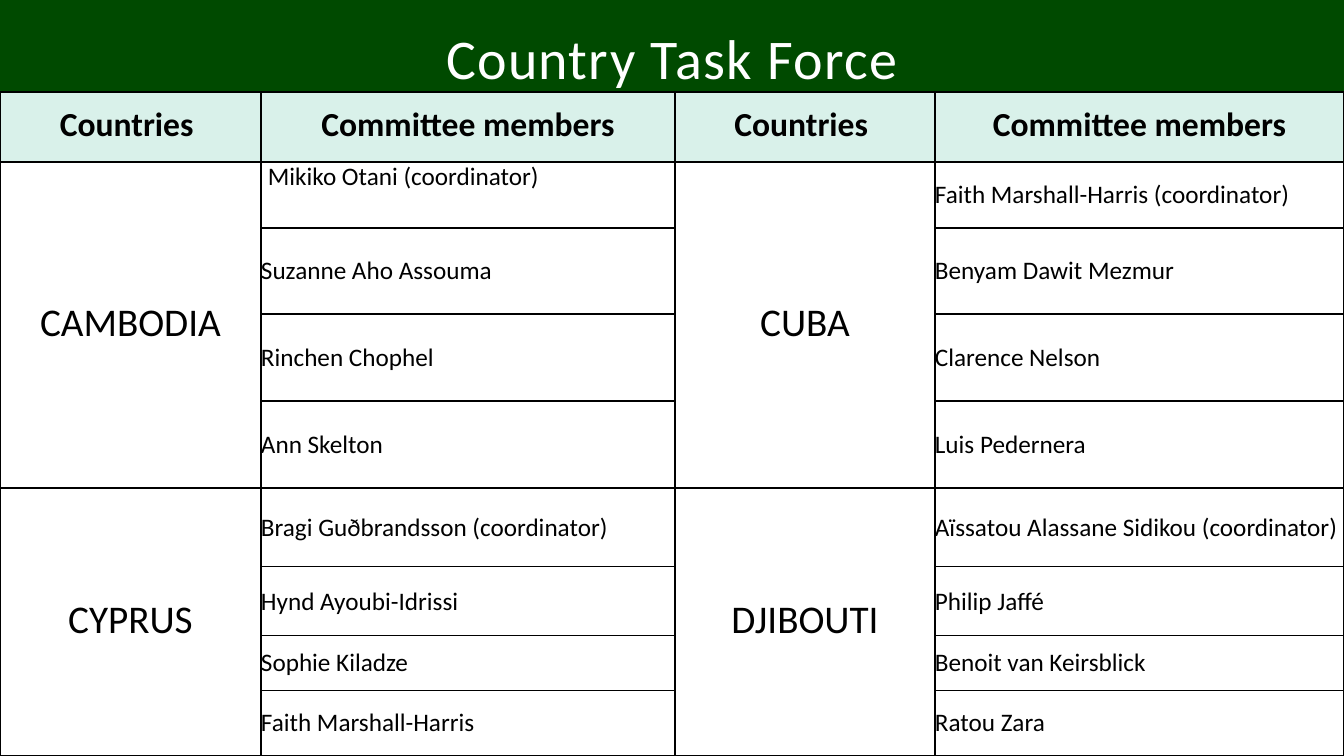
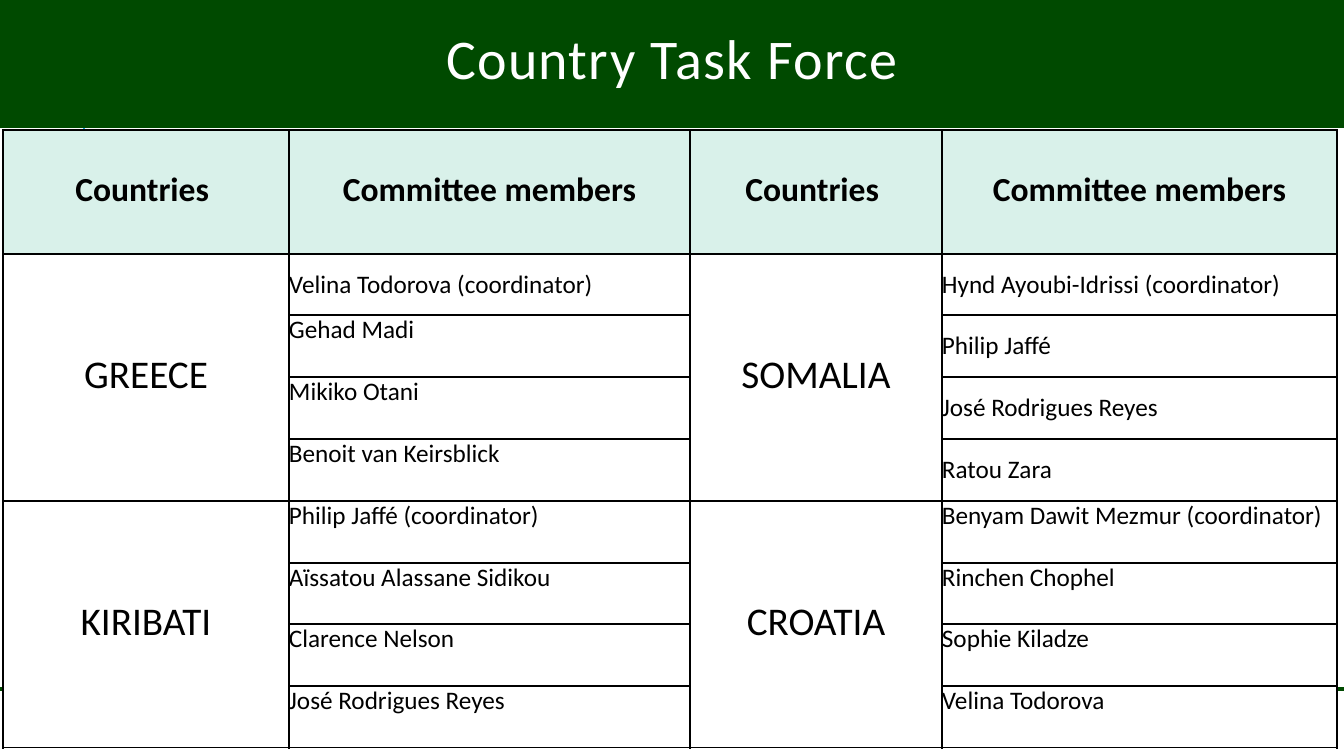
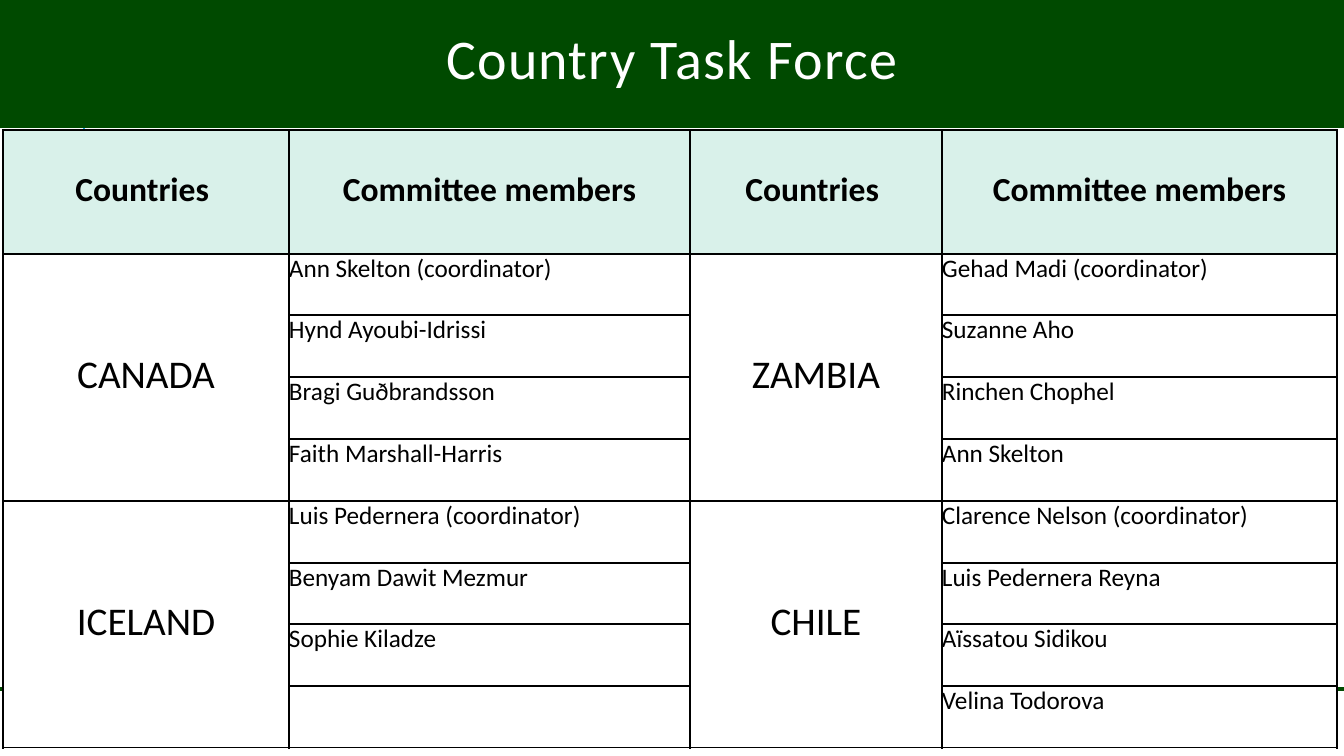
from dataclasses import dataclass
from itertools import pairwise, zip_longest

from lxml import etree
from pptx import Presentation
from pptx.dml.color import RGBColor
from pptx.enum.shapes import MSO_CONNECTOR, MSO_SHAPE
from pptx.enum.text import MSO_ANCHOR, PP_ALIGN
from pptx.oxml.ns import qn
from pptx.util import Emu, Pt

STRAIGHT = MSO_CONNECTOR.STRAIGHT
RECTANGLE = MSO_SHAPE.RECTANGLE
TOP, MIDDLE = MSO_ANCHOR.TOP, MSO_ANCHOR.MIDDLE
LEFT, CENTER = PP_ALIGN.LEFT, PP_ALIGN.CENTER

PAGE_WIDTH, PAGE_HEIGHT = 1344, 756
EMU_PER_PX = 12192000 / PAGE_WIDTH
FONT = "Calibri"
COLORS = {
    "band": "004A00",
    "accent": "1CADE4",
    "header": "D9F1EA",
    "white": "FFFFFF",
    "black": "000000",
}
TITLE = "Country Task Force"
HEADERS = ("Countries ", "Committee members") * 2
ROWS_PER_COUNTRY = 4


@dataclass(frozen=True)
class TextStyle:
    size: int
    color: str = "black"
    bold: bool = False
    align: PP_ALIGN = LEFT


@dataclass(frozen=True)
class CellLook:
    """Margins run left, top, right, bottom."""
    style: TextStyle
    margins: tuple[int, int, int, int] = (0, 0, 0, 0)
    anchor: MSO_ANCHOR = MIDDLE
    fill: str = "white"


@dataclass(frozen=True)
class TaskForce:
    """top_rows lists the members set at the top of their cells."""
    country: str
    members: tuple[str, ...]
    top_rows: tuple[int, ...] = ()
    lead_inset: int = 0


@dataclass(frozen=True)
class Grid:
    columns: tuple[int, ...]
    rows: tuple[int, ...]


TITLE_STYLE = TextStyle(40, "white", align=CENTER)
MEMBER_STYLE = TextStyle(18)
HEADER_LOOK = CellLook(TextStyle(24, bold=True, align=CENTER), (1, 1, 1, 5), fill="header")
COUNTRY_LOOK = CellLook(TextStyle(28, align=CENTER), (1, 1, 1, 5))

FULL_GRID = Grid((0, 261, 675, 935, 1344),
                 (92, 162, 228, 314, 401, 488, 567, 636, 691, 756))
# The header is two units high, each member row one.
EVEN_GRID = Grid((3, 289, 690, 942, 1337),
                 tuple(130 + round(61.8 * unit) for unit in (0, *range(2, 11))))

ALL_ROWS = tuple(range(ROWS_PER_COUNTRY))
# Task forces go left to right, then down.
PAGES = (
    (FULL_GRID, (
        TaskForce("CAMBODIA", ("Mikiko Otani (coordinator)", "Suzanne Aho Assouma",
                               "Rinchen Chophel", "Ann Skelton"), (0,), 7),
        TaskForce("CUBA", ("Faith Marshall-Harris (coordinator)", "Benyam Dawit Mezmur",
                           "Clarence Nelson", "Luis Pedernera")),
        TaskForce("CYPRUS", ("Bragi Guðbrandsson (coordinator)", "Hynd Ayoubi-Idrissi",
                             "Sophie Kiladze", "Faith Marshall-Harris")),
        TaskForce("DJIBOUTI", ("Aïssatou Alassane Sidikou (coordinator)", "Philip Jaffé",
                               "Benoit van Keirsblick", "Ratou Zara")),
    )),
    (EVEN_GRID, (
        TaskForce("GREECE", ("Velina Todorova (coordinator)", "Gehad Madi",
                             "Mikiko Otani", "Benoit van Keirsblick"), (1, 2, 3)),
        TaskForce("SOMALIA", ("Hynd Ayoubi-Idrissi (coordinator)", "Philip Jaffé",
                              "José Rodrigues Reyes", "Ratou Zara")),
        TaskForce("KIRIBATI", ("Philip Jaffé (coordinator)", "Aïssatou Alassane Sidikou",
                               "Clarence Nelson", "José Rodrigues Reyes"), ALL_ROWS),
        TaskForce("CROATIA", ("Benyam Dawit Mezmur (coordinator)", "Rinchen Chophel",
                              "Sophie Kiladze", "Velina Todorova"), ALL_ROWS),
    )),
    (EVEN_GRID, (
        TaskForce("CANADA", ("Ann Skelton (coordinator)", "Hynd Ayoubi-Idrissi",
                             "Bragi Guðbrandsson", "Faith Marshall-Harris"), ALL_ROWS),
        TaskForce("ZAMBIA", ("Gehad Madi (coordinator)", "Suzanne Aho",
                             "Rinchen Chophel", "Ann Skelton"), ALL_ROWS),
        TaskForce("ICELAND", ("Luis Pedernera (coordinator)", "Benyam Dawit Mezmur",
                              "Sophie Kiladze"), ALL_ROWS),
        TaskForce("CHILE", ("Clarence Nelson (coordinator)", "Luis Pedernera Reyna",
                            "Aïssatou Sidikou", "Velina Todorova"), ALL_ROWS),
    )),
)


def px(length: int) -> Emu:
    return Emu(round(length * EMU_PER_PX))


def rgb(name: str) -> RGBColor:
    return RGBColor.from_string(COLORS[name])


def add_span(para, text: str, style: TextStyle):
    para.alignment = style.align
    span = para.add_run()
    span.text = text
    span.font.name = FONT
    span.font.size = Pt(style.size)
    span.font.bold = style.bold
    span.font.color.rgb = rgb(style.color)
    return span


def add_line(page, start: tuple[int, int], end: tuple[int, int], color: str, width: float) -> None:
    line = page.shapes.add_connector(STRAIGHT, *map(px, start + end))
    line.line.color.rgb = rgb(color)
    line.line.width = Pt(width)
    etree.SubElement(line._element.spPr, qn("a:effectLst"))


def add_frame(page) -> None:
    """Draw the lines, band and title that every page has."""
    add_line(page, (84, 192), (84, 91), "accent", 1.5)
    add_line(page, (0, 689), (PAGE_WIDTH, 689), "band", 3)
    band = page.shapes.add_shape(RECTANGLE, px(0), px(-3), px(PAGE_WIDTH), px(131))
    band.shadow.inherit = False
    band.fill.solid()
    band.fill.fore_color.rgb = rgb("band")
    band.line.fill.background()

    box = page.shapes.add_textbox(px(0), px(0), px(PAGE_WIDTH), px(126))
    box.text_frame.word_wrap = True
    box.text_frame.vertical_anchor = MIDDLE
    para = box.text_frame.paragraphs[0]
    para.line_spacing = 0.8
    span = add_span(para, TITLE, TITLE_STYLE)
    span._r.get_or_add_rPr().set("spc", "100")


def add_borders(cell) -> None:
    properties = cell._tc.get_or_add_tcPr()
    for side in ("lnL", "lnR", "lnT", "lnB"):
        border = etree.SubElement(properties, qn(f"a:{side}"), w=str(Pt(1)))
        fill = etree.SubElement(border, qn("a:solidFill"))
        etree.SubElement(fill, qn("a:srgbClr"), val=COLORS["black"])


def fill_cell(cell, text: str, look: CellLook) -> None:
    cell.margin_left, cell.margin_top, cell.margin_right, cell.margin_bottom = map(px, look.margins)
    cell.vertical_anchor = look.anchor
    cell.fill.solid()
    cell.fill.fore_color.rgb = rgb(look.fill)
    if text:
        add_span(cell.text_frame.paragraphs[0], text, look.style)


def add_task_force(table, force: TaskForce, first_row: int, column: int) -> None:
    country = table.cell(first_row, column)
    country.merge(table.cell(first_row + ROWS_PER_COUNTRY - 1, column))
    fill_cell(country, force.country, COUNTRY_LOOK)
    for index, member in zip_longest(ALL_ROWS, force.members, fillvalue=""):
        inset = force.lead_inset if index == 0 else 0
        anchor = TOP if index in force.top_rows else MIDDLE
        look = CellLook(MEMBER_STYLE, (inset, 0, inset, 0), anchor)
        fill_cell(table.cell(first_row + index, column + 1), member, look)


def add_task_table(page, grid: Grid, forces: tuple[TaskForce, ...]) -> None:
    left, right = grid.columns[0], grid.columns[-1]
    top, bottom = grid.rows[0], grid.rows[-1]
    table = page.shapes.add_table(len(grid.rows) - 1, len(grid.columns) - 1,
                                  px(left), px(top), px(right - left), px(bottom - top)).table
    table.first_row = table.horz_banding = False
    for column, (start, end) in zip(table.columns, pairwise(grid.columns)):
        column.width = px(end - start)
    for row, (start, end) in zip(table.rows, pairwise(grid.rows)):
        row.height = px(end - start)
    for cell in table.iter_cells():
        add_borders(cell)
    for column, header in enumerate(HEADERS):
        fill_cell(table.cell(0, column), header, HEADER_LOOK)
    for index, force in enumerate(forces):
        down, across = divmod(index, 2)
        add_task_force(table, force, 1 + down * ROWS_PER_COUNTRY, across * 2)


def main() -> None:
    deck = Presentation()
    deck.slide_width, deck.slide_height = px(PAGE_WIDTH), px(PAGE_HEIGHT)
    for grid, forces in PAGES:
        page = deck.slides.add_slide(deck.slide_layouts[6])
        add_frame(page)
        add_task_table(page, grid, forces)
    deck.save("out.pptx")


if __name__ == "__main__":
    main()
